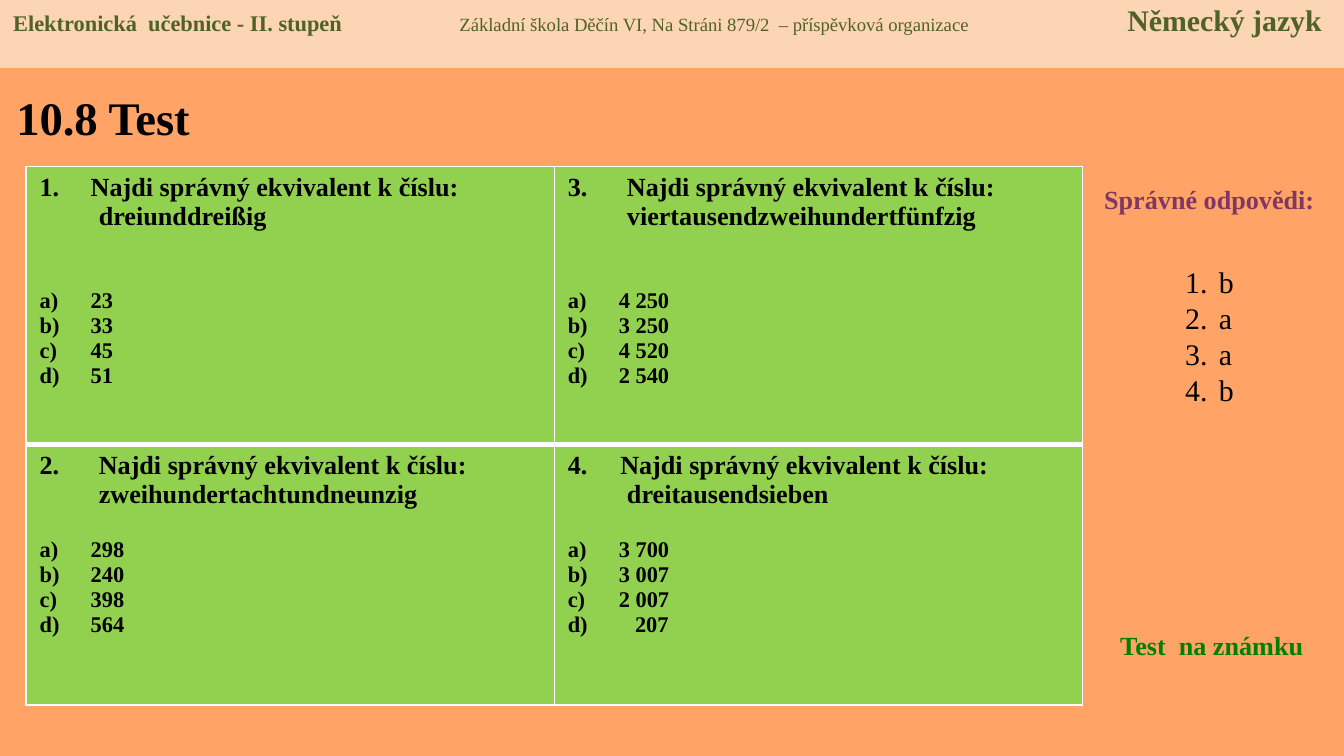
from lxml.etree import SubElement
from pptx import Presentation
from pptx.dml.color import RGBColor
from pptx.enum.shapes import MSO_SHAPE as Shape
from pptx.enum.text import MSO_ANCHOR as Anchor, PP_ALIGN as Align
from pptx.oxml import parse_xml
from pptx.oxml.ns import nsdecls, qn
from pptx.util import Emu, Inches, Pt

BLACK, WHITE, OLIVE = "000000", "FFFFFF", "4F6228"
PROMPT = "Najdi správný ekvivalent k číslu:"
WORD_INDENT = 0.44
OPTION_INDENT = 0.38

QUESTIONS = [
    [("", 0.38, "dreiunddreißig", ["23", "33", "45", "51"]),
     ("3.\t", 0.44, "viertausendzweihundertfünfzig", ["4 250", "3 250", "4 520", "2 540"])],
    [("2.\t", 0.44, "zweihundertachtundneunzig", ["298", "240", "398", "564"]),
     ("4.\t", 0.39, "dreitausendsieben", ["3 700", "3 007", "2 007", "207"])],
]
OPTION_GAPS = [31, 15.5]
SHORT_NUMBER_INDENT = 0.5


def color(hex_value):
    return RGBColor.from_string(hex_value)


class TestSlide:
    font_name = "Times New Roman"

    def __init__(self, deck, background):
        self.width, self.height = deck.slide_width, deck.slide_height
        self.slide = deck.slides.add_slide(deck.slide_layouts[6])
        fill = self.slide.background.fill
        fill.solid()
        fill.fore_color.rgb = color(background)

    def place(self, left, top, width, height):
        x, y = self.width / 100, self.height / 100
        return Emu(int(left * x)), Emu(int(top * y)), Emu(int(width * x)), Emu(int(height * y))

    def style(self, font, size, ink=BLACK, bold=True):
        font.name, font.size, font.bold = self.font_name, Pt(size), bold
        font.color.rgb = color(ink)

    def paragraph(self, frame, text, size, ink=BLACK, bold=True, align=Align.LEFT,
                  indent=0, hanging=True, numbering=None, gap=0):
        line = frame.paragraphs[0]
        if line.text:
            line = frame.add_paragraph()
        line.text = text
        line.alignment = align
        props = line._p.get_or_add_pPr()
        if indent:
            props.set("marL", str(Inches(indent)))
            props.set("indent", str(-Inches(indent) if hanging else 0))
        if numbering:
            SubElement(props, qn("a:buAutoNum"), type=numbering)
        if gap:
            line.space_before = Pt(gap)
        self.style(line.font, size, ink, bold)

    def text_box(self, *area, anchor=Anchor.TOP, top_inset=0.05):
        frame = self.slide.shapes.add_textbox(*self.place(*area)).text_frame
        frame.word_wrap = True
        frame.vertical_anchor = anchor
        frame.margin_top = Inches(top_inset)
        return frame

    def banner(self, area, fill, parts, stops):
        band = self.slide.shapes.add_shape(Shape.RECTANGLE, *self.place(*area))
        band.shadow.inherit = False
        band.fill.solid()
        band.fill.fore_color.rgb = color(fill)
        band.line.fill.background()
        band.text_frame.vertical_anchor = Anchor.TOP
        line = band.text_frame.paragraphs[0]
        line.alignment = Align.LEFT
        tabs = SubElement(line._p.get_or_add_pPr(), qn("a:tabLst"))
        for stop in stops:
            SubElement(tabs, qn("a:tab"), pos=str(Inches(stop)), algn="l")
        for text, size, bold in parts:
            run = line.add_run()
            run.text = text
            self.style(run.font, size, OLIVE, bold)

    def borders(self, cell, widths):
        props = cell._tc.get_or_add_tcPr()
        for position, (side, points) in enumerate(zip("LRTB", widths)):
            props.insert(position, parse_xml(
                f'<a:ln{side} {nsdecls("a")} w="{Pt(points)}"><a:solidFill>'
                f'<a:srgbClr val="{WHITE}"/></a:solidFill></a:ln{side}>'))

    def question(self, cell, lead, indent, word, options, gap):
        frame = cell.text_frame
        self.paragraph(frame, lead + PROMPT, 14, indent=indent,
                       numbering=None if lead else "arabicPeriod")
        self.paragraph(frame, word, 14, indent=WORD_INDENT, hanging=False)
        for index, option in enumerate(options):
            short = len(option) < len(options[0])
            self.paragraph(frame, option, 12, numbering="alphaLcParenR",
                           indent=SHORT_NUMBER_INDENT if short else OPTION_INDENT,
                           gap=0 if index else gap)

    def question_table(self, left, top, width, row_heights, fill):
        area = self.place(left, top, width, sum(row_heights))
        table = self.slide.shapes.add_table(len(QUESTIONS), 2, *area).table
        table.first_row = table.horz_banding = False
        for row, height in enumerate(row_heights):
            table.rows[row].height = self.place(0, 0, 0, height)[3]
            for column, content in enumerate(QUESTIONS[row]):
                cell = table.cell(row, column)
                cell.fill.solid()
                cell.fill.fore_color.rgb = color(fill)
                self.borders(cell, (1, 1, 3, 1) if row else (1, 1, 1, 3))
                self.question(cell, *content, OPTION_GAPS[row])


def main():
    deck = Presentation()
    deck.slide_width = Inches(10)
    deck.slide_height = Emu(deck.slide_width * 9 // 16)
    page = TestSlide(deck, "FFA366")

    title = page.text_box(0.23, 9.7, 31.9, 11.56, anchor=Anchor.MIDDLE)
    page.paragraph(title, "10.8 Test", 25)

    answers_heading = page.text_box(80.53, 23.4, 18.9, 6.04)
    page.paragraph(answers_heading, "Správné odpovědi:", 14, "813763", align=Align.CENTER)

    page.question_table(1.95, 22, 78.6, (36.8, 34.5), "92D050")

    answers = page.text_box(87.2, 29.4, 5.5, 35.38, top_inset=0.31)
    for letter in "baab":
        page.paragraph(answers, letter, 16, bold=False, indent=0.25, numbering="arabicPeriod")

    graded_test = page.text_box(82.37, 82.4, 15.7, 6.04)
    page.paragraph(graded_test, "Test  na známku", 14, "008000")

    page.banner((0, -0.6, 100.2, 9.6), "FCD5B5", [
        ("Elektronická  učebnice - II. stupeň\t", 12, True),
        ("Základní škola Děčín VI, Na Stráni 879/2  – příspěvková organizace\t", 10, False),
        ("Německý jazyk", 16, True),
    ], stops=(3.32, 8.29))

    deck.save("out.pptx")


if __name__ == "__main__":
    main()
